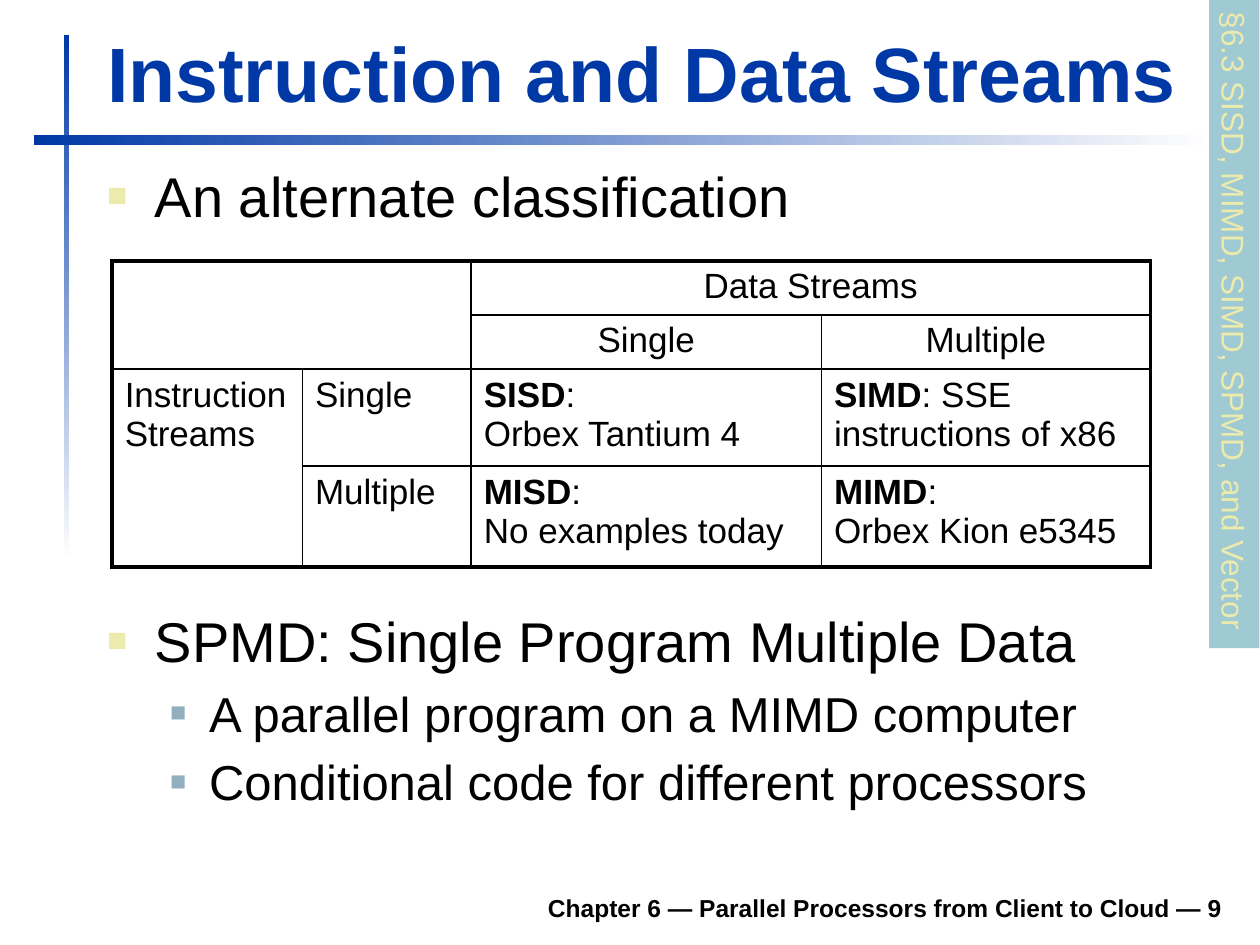
from lxml import etree
from pptx import Presentation
from pptx.dml.color import RGBColor
from pptx.enum import shapes, text
from pptx.oxml import ns
from pptx.util import Inches, Pt

BLUE = RGBColor(0x00, 0x39, 0xA6)
WHITE = RGBColor(0xFF, 0xFF, 0xFF)
BLACK = RGBColor(0x00, 0x00, 0x00)
CREAM = RGBColor(0xEC, 0xEA, 0xAC)
STEEL = RGBColor(0x91, 0xAF, 0xBF)
TEAL = RGBColor(0x9F, 0xCA, 0xD3)
FONT = "Arial"

# Per list level: text size, bullet colour, bullet percent, margin, hang
LEVELS = [(32, CREAM, 60, 0.38, 0.38), (28, STEEL, 55, 0.81, 0.31)]

COLS = [1.51, 1.34, 2.78, 2.61]
ROWS = [0.43, 0.43, 0.77, 0.8]
SPANS = [(0, 0, 1, 1), (0, 2, 0, 3), (2, 0, 3, 0)]
# (row, column): bold part, then the plain lines that follow it
CELLS = {
    (0, 2): ("", "Data Streams"),
    (1, 2): ("", "Single"),
    (1, 3): ("", "Multiple"),
    (2, 0): ("", "Instruction Streams"),
    (2, 1): ("", "Single"),
    (2, 2): ("SISD", ":", "Orbex Tantium 4"),
    (2, 3): ("SIMD", ": SSE instructions of x86"),
    (3, 1): ("", "Multiple"),
    (3, 2): ("MISD", ":", "No examples today"),
    (3, 3): ("MIMD", ":", "Orbex Kion e5345"),
}


def place(shape, box):
    shape.left, shape.top, shape.width, shape.height = map(Inches, box)


def style(para, size, color=BLACK, bold=False):
    for run in para.runs:
        font = run.font
        font.name, font.size, font.bold = FONT, Pt(size), bold
        font.color.rgb = color


def add_node(parent, tag, **attrs):
    return etree.SubElement(parent, ns.qn(tag), **attrs)


def add_bar(slide, box, angle):
    bar = slide.shapes.add_shape(shapes.MSO_SHAPE.RECTANGLE, *map(Inches, box))
    bar.shadow.inherit = False
    bar.line.fill.background()
    bar.fill.gradient()
    bar.fill.gradient_angle = angle
    for stop, color in zip(bar.fill.gradient_stops, (BLUE, WHITE)):
        stop.color.rgb = color


def fill_title(title, box, words):
    place(title, box)
    frame = title.text_frame
    frame.text = words
    frame.auto_size = text.MSO_AUTO_SIZE.NONE
    frame.vertical_anchor = text.MSO_ANCHOR.BOTTOM
    para = frame.paragraphs[0]
    para.alignment = text.PP_ALIGN.LEFT
    style(para, 44, BLUE, True)


def fill_list(body, box, items):
    """Set (level, words) items with square bullets."""
    place(body, box)
    frame = body.text_frame
    frame.text = "\n".join(words for _, words in items)
    frame.auto_size = text.MSO_AUTO_SIZE.NONE
    for para, (level, _) in zip(frame.paragraphs, items):
        size, color, percent, margin, hang = LEVELS[level]
        para.level = level
        para.space_before = Pt(size * 0.2)
        style(para, size)
        props = para._p.get_or_add_pPr()
        props.set("marL", str(Inches(margin)))
        props.set("indent", str(-Inches(hang)))
        add_node(add_node(props, "a:buClr"), "a:srgbClr", val=str(color))
        add_node(props, "a:buSzPct", val=str(percent * 1000))
        add_node(props, "a:buFont", typeface=FONT)
        add_node(props, "a:buChar", char="■")


def draw_edges(cell, row, col):
    """Give the cell thin borders, thick where it meets the table's rim."""
    rims = {
        "L": col == 0,
        "R": col + cell.span_width == len(COLS),
        "T": row == 0,
        "B": row + cell.span_height == len(ROWS),
    }
    props = cell._tc.get_or_add_tcPr()
    for side, rim in rims.items():
        edge = add_node(props, "a:ln" + side, w=str(Pt(2.25 if rim else 1)))
        add_node(add_node(edge, "a:solidFill"), "a:srgbClr", val=str(BLACK))


def fill_cell(cell, bold, first, *rest):
    para = cell.text_frame.paragraphs[0]
    para.space_before = Pt(4)
    if bold:
        para.add_run().text = bold
    para.add_run().text = first
    for line in rest:
        para.add_line_break()
        para.add_run().text = line
    style(para, 20)
    if bold:
        para.runs[0].font.bold = True


def add_grid(slide, box):
    frame = slide.shapes.add_table(len(ROWS), len(COLS), *map(Inches, box))
    table = frame.table
    table.first_row = table.horz_banding = False
    for col, width in zip(table.columns, COLS):
        col.width = Inches(width)
    for row, height in zip(table.rows, ROWS):
        row.height = Inches(height)
    for top, left, bottom, right in SPANS:
        table.cell(top, left).merge(table.cell(bottom, right))
    for r in range(len(ROWS)):
        for c in range(len(COLS)):
            cell = table.cell(r, c)
            if not cell.is_spanned:
                draw_edges(cell, r, c)
            cell.fill.background()
            if (r, c) in CELLS:
                fill_cell(cell, *CELLS[r, c])
                if r < 2:
                    cell.text_frame.paragraphs[0].alignment = text.PP_ALIGN.CENTER


def add_footer(slide, box, words):
    frame = slide.shapes.add_textbox(*map(Inches, box)).text_frame
    frame.word_wrap = True
    frame.vertical_anchor = text.MSO_ANCHOR.BOTTOM
    frame.text = words
    para = frame.paragraphs[0]
    para.alignment = text.PP_ALIGN.RIGHT
    style(para, 14, bold=True)


def add_tab(slide, box, words):
    """Add the section label that runs down the right edge."""
    tab = slide.shapes.add_shape(shapes.MSO_SHAPE.RECTANGLE, *map(Inches, box))
    tab.rotation = 90
    tab.shadow.inherit = False
    tab.line.fill.background()
    tab.fill.solid()
    tab.fill.fore_color.rgb = TEAL
    frame = tab.text_frame
    frame.word_wrap = False
    frame.vertical_anchor = text.MSO_ANCHOR.TOP
    frame.text = words
    para = frame.paragraphs[0]
    para.alignment = text.PP_ALIGN.LEFT
    style(para, 18, CREAM)


def main():
    deck = Presentation()
    deck.slide_width, deck.slide_height = Inches(10), Inches(7.5)
    slide = deck.slides.add_slide(deck.slide_layouts.get_by_name("Two Content"))
    title, upper, lower = slide.placeholders
    add_bar(slide, (0.51, 0.28, 0.04, 4.17), 270)
    add_bar(slide, (0.27, 1.07, 9.37, 0.08), 0)
    fill_title(title, (0.75, 0.16, 9.03, 0.83), "Instruction and Data Streams")
    fill_list(upper, (0.75, 1.23, 9.05, 0.7), [(0, "An alternate classification")])
    add_grid(slide, (0.89, 2.07, sum(COLS), sum(ROWS)))
    fill_list(lower, (0.75, 4.76, 9.05, 1.91), [
        (0, "SPMD: Single Program Multiple Data"),
        (1, "A parallel program on a MIMD computer"),
        (1, "Conditional code for different processors"),
    ])
    add_footer(slide, (1.85, 6.98, 7.95, 0.39),
               "Chapter 6 — Parallel Processors from Client to Cloud — 9")
    add_tab(slide, (7.22, 2.37, 5.15, 0.4),
            "§6.3 SISD, MIMD, SIMD, SPMD, and Vector")
    deck.save("out.pptx")


if __name__ == "__main__":
    main()
